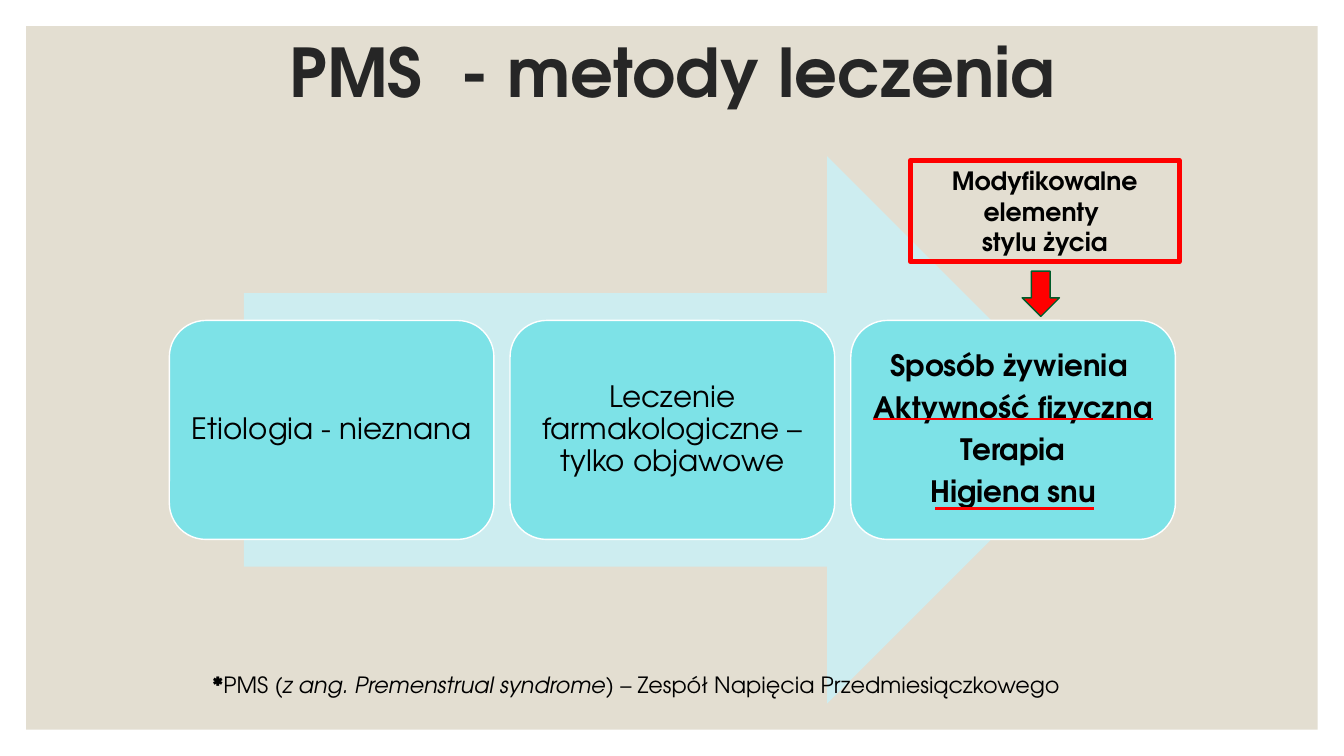
import collections
import lxml.etree
import pptx
import pptx.dml.color
import pptx.enum.shapes
import pptx.enum.text
import pptx.oxml.ns
import pptx.util

RGBColor = pptx.dml.color.RGBColor
SHAPE = pptx.enum.shapes.MSO_SHAPE
CENTER = pptx.enum.text.PP_ALIGN.CENTER
MIDDLE = pptx.enum.text.MSO_ANCHOR.MIDDLE

SAND = RGBColor(0xE3, 0xDE, 0xD1)
CHARCOAL = RGBColor(0x26, 0x26, 0x26)
BLACK = RGBColor(0, 0, 0)
WHITE = RGBColor(0xFF, 0xFF, 0xFF)
PALE_AQUA = RGBColor(0xCD, 0xED, 0xF0)
AQUA = RGBColor(0x7D, 0xE2, 0xE7)
RED = RGBColor(0xFF, 0, 0)
GREEN = RGBColor(0, 0x5C, 0x2A)

FONT = "TeX Gyre Adventor"
CELL = pptx.util.Inches(0.1)
COLUMNS, ROWS = 133.33, 75
CARD_WIDTH, CARD_STEP = 32.2, 33.8

TREATMENTS = [
    (["Etiologia - nieznana"], False),
    (["Leczenie farmakologiczne – tylko objawowe"], False),
    (["Sposób żywienia ", "Aktywność fizyczna", "Terapia", "Higiena snu"], True),
]
FOOTNOTE = [
    ("*", True, False),
    ("PMS (", False, False),
    ("z ang. Premenstrual syndrome", False, True),
    (") – Zespół Napięcia Przedmiesiączkowego", False, False),
]

Box = collections.namedtuple("Box", "left top width height")


def on_grid(*lengths):
    return [round(length * CELL) for length in lengths]


def style_run(run, size, color=BLACK, bold=False, italic=False):
    run.font.name = FONT
    run.font.size = pptx.util.Pt(size)
    run.font.color.rgb = color
    run.font.bold = bold
    run.font.italic = italic


def write_centered(frame, lines, size, color=BLACK, bold=False, spacing=1.0, after=0):
    frame.text = "\n".join(lines)
    frame.word_wrap = True
    frame.vertical_anchor = MIDDLE
    for paragraph in frame.paragraphs:
        paragraph.alignment = CENTER
        paragraph.line_spacing = spacing
        paragraph.space_before = pptx.util.Pt(0)
        paragraph.space_after = pptx.util.Pt(after)
        for run in paragraph.runs:
            style_run(run, size, color, bold)


def draw(slide, preset, box, fill=None, outline=None, weight=1):
    shape = slide.shapes.add_shape(preset, *on_grid(*box))
    shape.shadow.inherit = False
    if fill is None:
        shape.fill.background()
    else:
        shape.fill.solid()
        shape.fill.fore_color.rgb = fill
    if outline is None:
        shape.line.fill.background()
    else:
        shape.line.color.rgb = outline
        shape.line.width = pptx.util.Pt(weight)
    return shape


def add_panel_and_title(slide, panel_box, title_box):
    title = slide.shapes.title
    title.left, title.top, title.width, title.height = on_grid(*title_box)
    write_centered(title.text_frame, ["PMS  - metody leczenia"], 48, CHARCOAL, True, 0.9)
    panel = draw(slide, SHAPE.RECTANGLE, panel_box, SAND)
    title.element.addprevious(panel.element)


def add_treatment_process(slide, box):
    arrow = Box(box.left + 0.075 * box.width, box.top, 0.85 * box.width, box.height)
    draw(slide, SHAPE.RIGHT_ARROW, arrow, PALE_AQUA)
    for index, (lines, bold) in enumerate(TREATMENTS):
        card_box = Box(box.left + 0.1 + index * CARD_STEP, box.top + 0.3 * box.height,
                       CARD_WIDTH, 0.4 * box.height)
        card = draw(slide, SHAPE.ROUNDED_RECTANGLE, card_box, AQUA, WHITE)
        frame = card.text_frame
        frame.margin_left = frame.margin_right = pptx.util.Inches(0.09)
        frame.margin_top = frame.margin_bottom = pptx.util.Inches(0.09)
        write_centered(frame, lines, 21, bold=bold, spacing=0.9, after=7.35)
    return card_box


def add_lifestyle_callout(slide, box):
    label_box = Box(box.left, box.top, box.width, 0.65 * box.height)
    label = draw(slide, SHAPE.RECTANGLE, label_box, outline=RED, weight=3.5)
    write_centered(label.text_frame, ["Modyfikowalne elementy ", "stylu życia"], 18, bold=True)
    pointer = Box(box.left + 11.1, box.top + 0.71 * box.height, 3.7, 0.29 * box.height)
    draw(slide, SHAPE.DOWN_ARROW, pointer, RED, GREEN)


def add_footnote(slide, box):
    frame = slide.shapes.add_textbox(*on_grid(*box)).text_frame
    frame.word_wrap = True
    for text, bold, italic in FOOTNOTE:
        run = frame.paragraphs[0].add_run()
        run.text = text
        style_run(run, 16, bold=bold, italic=italic)


def add_underlines(slide, card):
    for start, start_row, end, end_row in [(0.07, 0.45, 0.93, 0.45), (0.26, 0.86, 0.75, 0.86)]:
        underline = slide.shapes.add_connector(
            pptx.enum.shapes.MSO_CONNECTOR.STRAIGHT,
            *on_grid(card.left + start * card.width, card.top + start_row * card.height,
                     card.left + end * card.width, card.top + end_row * card.height))
        underline.line.color.rgb = RED
        underline.line.width = pptx.util.Pt(2)
        lxml.etree.SubElement(underline.element.spPr, pptx.oxml.ns.qn("a:effectLst"))


def main():
    presentation = pptx.Presentation()
    presentation.slide_width, presentation.slide_height = on_grid(COLUMNS, ROWS)
    slide = presentation.slides.add_slide(presentation.slide_layouts[5])
    add_panel_and_title(slide, Box(2.6, 2.6, COLUMNS - 5.2, ROWS - 5.2),
                        Box(21.7, 1.3, 90, 12.5))
    lifestyle_card = add_treatment_process(slide, Box(16.7, 15.5, 100, 54.3))
    add_lifestyle_callout(slide, Box(90.3, 15.9, 26.7, 15.5))
    add_footnote(slide, Box(20.1, 66.1, 97.3, 3.7))
    add_underlines(slide, lifestyle_card)
    presentation.save("out.pptx")


if __name__ == "__main__":
    main()
